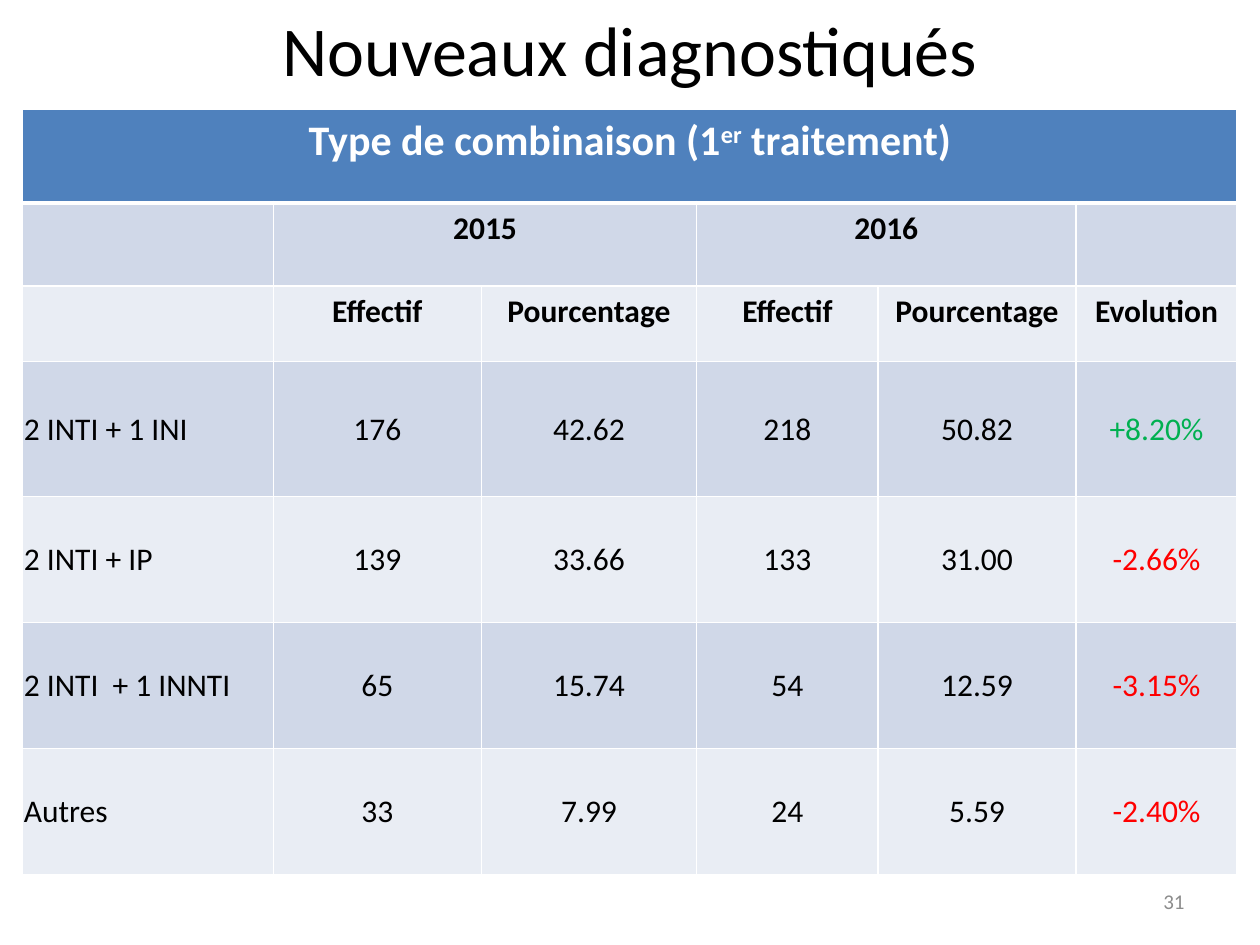
import pptx
import pptx.util
import pptx.dml.color
import pptx.enum.text
import lxml.etree
import pptx.oxml.ns

Inches = pptx.util.Inches
ALIGN = pptx.enum.text.PP_ALIGN
ANCHOR = pptx.enum.text.MSO_ANCHOR

WIDTHS = [1.99, 1.65, 1.71, 1.44, 1.57, 1.28]
HEIGHTS = [0.74, 0.66, 0.6, 1.07, 1, 1, 1]
HEADING = ["Type de combinaison (1", "er", " traitement)"]
ROWS = [
    ["", "2015", "", "2016", "", ""],
    ["", "Effectif", "Pourcentage", "Effectif", "Pourcentage", "Evolution"],
    ["2 INTI + 1 INI", "176", "42.62", "218", "50.82", "+8.20%"],
    ["2 INTI + IP", "139", "33.66", "133", "31.00", "-2.66%"],
    ["2 INTI  + 1 INNTI", "65", "15.74", "54", "12.59", "-3.15%"],
    ["Autres", "33", "7.99", "24", "5.59", "-2.40%"],
]
BANDS = ["D0D8E8", "E9EDF4"]
TRENDS = {"+": "00B050", "-": "FF0000"}


def color(code):
    return pptx.dml.color.RGBColor.from_string(code)


def style(para, size, code="000000", bold=False, align=ALIGN.CENTER):
    para.alignment = align
    for run in para.runs:
        font = run.font
        font.name = "Calibri"
        font.size = pptx.util.Pt(size)
        font.bold = bold
        font.color.rgb = color(code)


def add_text(slide, box, text, size, code, align, anchor):
    frame = slide.shapes.add_textbox(*map(Inches, box)).text_frame
    frame.word_wrap = True
    frame.vertical_anchor = anchor
    frame.text = text
    style(frame.paragraphs[0], size, code, align=align)


def paint(cell, fill, top=1, bottom=1):
    """Give the cell white borders, in points, and then its fill."""
    props = cell._tc.get_or_add_tcPr()
    tag = pptx.oxml.ns.qn
    for side, width in zip("LRTB", (1, 1, top, bottom)):
        line = lxml.etree.SubElement(props, tag("a:ln" + side), w=str(pptx.util.Pt(width)))
        solid = lxml.etree.SubElement(line, tag("a:solidFill"))
        lxml.etree.SubElement(solid, tag("a:srgbClr"), val="FFFFFF")
    cell.fill.solid()
    cell.fill.fore_color.rgb = color(fill)


def fill_heading(table):
    for col in range(len(WIDTHS)):
        paint(table.cell(0, col), "4F81BD", bottom=3)
    table.cell(0, 0).merge(table.cell(0, len(WIDTHS) - 1))
    para = table.cell(0, 0).text_frame.paragraphs[0]
    for text in HEADING:
        para.add_run().text = text
    style(para, 24, "FFFFFF", bold=True)
    para.runs[1].font._element.set("baseline", "30000")


def fill_cell(cell, text, row, col):
    paint(cell, BANDS[(row - 1) % 2], top=3 if row == 1 else 1)
    cell.text_frame.text = text
    para = cell.text_frame.paragraphs[0]
    if row < 3:
        style(para, 18, bold=True)
        return
    cell.vertical_anchor = ANCHOR.MIDDLE
    cell.margin_left = cell.margin_right = cell.margin_top = Inches(0.01)
    cell.margin_bottom = 0
    style(para, 18, TRENDS.get(text[0], "000000"),
          align=ALIGN.CENTER if col else ALIGN.LEFT)


def add_results(slide, box):
    table = slide.shapes.add_table(
        len(HEIGHTS), len(WIDTHS), *map(Inches, box)).table
    for col, width in zip(table.columns, WIDTHS):
        col.width = Inches(width)
    for row, height in zip(table.rows, HEIGHTS):
        row.height = Inches(height)
    fill_heading(table)
    for row, texts in enumerate(ROWS, 1):
        for col, text in enumerate(texts):
            fill_cell(table.cell(row, col), text, row, col)
    for col in (1, 3):
        table.cell(1, col).merge(table.cell(1, col + 1))


def main():
    deck = pptx.Presentation()
    deck.slide_width, deck.slide_height = Inches(10), Inches(7.5)
    slide = deck.slides.add_slide(deck.slide_layouts[6])
    add_text(slide, (7.17, 6.95, 2.33, 0.4), "31", 12, "8C8C8C",
             ALIGN.RIGHT, ANCHOR.MIDDLE)
    add_results(slide, (0.18, 0.87, 9.65, 6.08))
    add_text(slide, (0, 0, 10, 0.77), "Nouveaux diagnostiqués", 40, "000000",
             ALIGN.CENTER, ANCHOR.TOP)
    deck.save("out.pptx")


if __name__ == "__main__":
    main()
